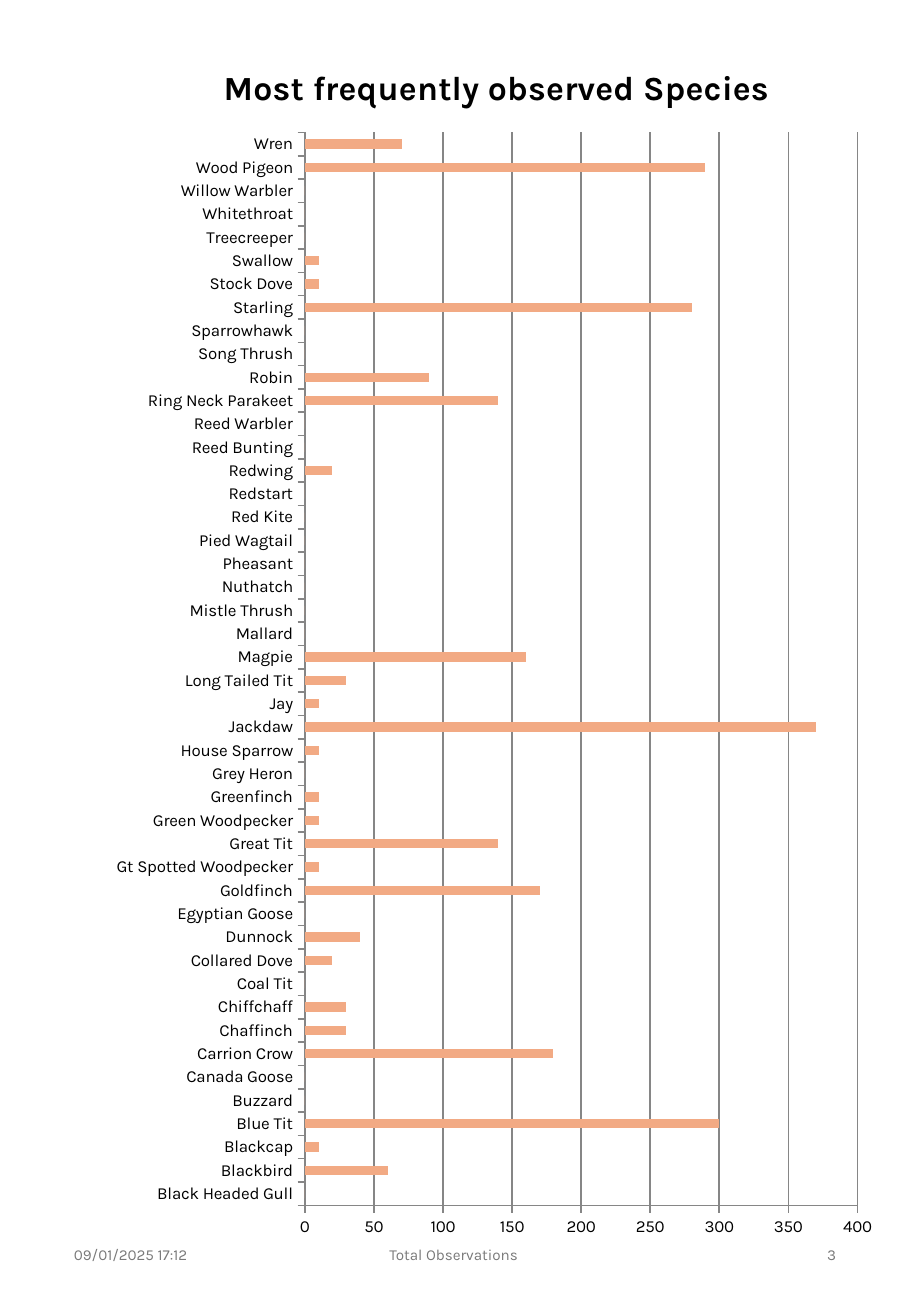
from dataclasses import dataclass

from lxml import etree
from pptx import Presentation
from pptx.chart import data as chart_data
from pptx.dml import color
from pptx.enum import chart as charts, text
from pptx.oxml import ns
from pptx.util import Emu, Pt

PX = 9144  # EMU in one px, 100 px to the inch
CHART_WIDTH, CHART_HEIGHT = 647, 1024


@dataclass(frozen=True)
class Theme:
    font: str = "Karla"
    ink: str = "000000"
    muted: str = "797979"
    line: str = "868686"
    bar: str = "F2AA84"
    title_size: int = 20
    label_size: int = 10
    footer_size: int = 9


THEME = Theme()

SIGHTINGS = {
    "Black Headed Gull": 0, "Blackbird": 60, "Blackcap": 10, "Blue Tit": 300,
    "Buzzard": 0, "Canada Goose": 0, "Carrion Crow": 180, "Chaffinch": 30,
    "Chiffchaff": 30, "Coal Tit": 0, "Collared Dove": 20, "Dunnock": 40,
    "Egyptian Goose": 0, "Goldfinch": 170, "Gt Spotted Woodpecker": 10,
    "Great Tit": 140, "Green Woodpecker": 10, "Greenfinch": 10,
    "Grey Heron": 0, "House Sparrow": 10, "Jackdaw": 370, "Jay": 10,
    "Long Tailed Tit": 30, "Magpie": 160, "Mallard": 0, "Mistle Thrush": 0,
    "Nuthatch": 0, "Pheasant": 0, "Pied Wagtail": 0, "Red Kite": 0,
    "Redstart": 0, "Redwing": 20, "Reed Bunting": 0, "Reed Warbler": 0,
    "Ring Neck Parakeet": 140, "Robin": 90, "Song Thrush": 0,
    "Sparrowhawk": 0, "Starling": 280, "Stock Dove": 10, "Swallow": 10,
    "Treecreeper": 0, "Whitethroat": 0, "Willow Warbler": 0,
    "Wood Pigeon": 290, "Wren": 70,
}

FOOTERS = [  # wording, left, width, alignment
    ("09/01/2025 17:12", 51, 169, text.PP_ALIGN.LEFT),
    ("Total Observations", 247, 253, text.PP_ALIGN.CENTER),
    ("3", 529, 169, text.PP_ALIGN.RIGHT),
]


def px(*lengths):
    return [Emu(length * PX) for length in lengths]


def apply(target, values):
    for name, value in values.items():
        setattr(target, name, value)


def style_font(font, size, ink, bold=False):
    apply(font, {"name": THEME.font, "size": Pt(size), "bold": bold})
    font.color.rgb = color.RGBColor.from_string(ink)


def style_line(line):
    line.width = Pt(1)
    line.color.rgb = color.RGBColor.from_string(THEME.line)


def set_layout(parent, index, left, top, width=None, height=None):
    """Place a chart part by hand, in px from the chart's corner."""
    for old in parent.findall(ns.qn("c:layout")):
        parent.remove(old)
    settings = {"xMode": "edge", "yMode": "edge",
                "x": left / CHART_WIDTH, "y": top / CHART_HEIGHT}
    if width and height:
        settings = {"layoutTarget": "inner", **settings,
                    "w": width / CHART_WIDTH, "h": height / CHART_HEIGHT}
    layout = etree.Element(ns.qn("c:layout"))
    manual = etree.SubElement(layout, ns.qn("c:manualLayout"))
    for name, value in settings.items():
        etree.SubElement(manual, ns.qn(f"c:{name}"), val=str(value))
    parent.insert(index, layout)


def add_footer(page, wording, left, width, alignment):
    box = page.shapes.add_textbox(*px(left, 1003, width, 58))
    apply(box.text_frame, {"word_wrap": True,
                           "vertical_anchor": text.MSO_ANCHOR.MIDDLE})
    para = box.text_frame.paragraphs[0]
    apply(para, {"alignment": alignment, "space_after": Pt(6)})
    span = para.add_run()
    span.text = wording
    style_font(span.font, THEME.footer_size, THEME.muted)


def add_title(chart, wording):
    chart.has_title = True
    title = chart.chart_title
    title.include_in_layout = False
    span = title.text_frame.paragraphs[0].add_run()
    span.text = wording
    style_font(span.font, THEME.title_size, THEME.ink, bold=True)
    set_layout(title._element, 1, 94, 26)


def add_species_chart(page):
    data = chart_data.CategoryChartData()
    data.categories = list(SIGHTINGS)
    data.add_series("Series 1", list(SIGHTINGS.values()))
    frame = page.shapes.add_chart(charts.XL_CHART_TYPE.BAR_CLUSTERED,
                                  *px(85, 22, CHART_WIDTH, CHART_HEIGHT), data)
    chart = frame.chart
    chart.has_legend = False
    style_font(chart.font, THEME.label_size, THEME.ink)
    add_title(chart, "Most frequently observed Species")

    # Bars
    plot = chart.plots[0]
    apply(plot, {"gap_width": 150, "vary_by_categories": False})
    fill = plot.series[0].format.fill
    fill.solid()
    fill.fore_color.rgb = color.RGBColor.from_string(THEME.bar)

    # Axes and gridlines
    for axis in (chart.category_axis, chart.value_axis):
        apply(axis, {"major_tick_mark": charts.XL_TICK_MARK.OUTSIDE,
                     "minor_tick_mark": charts.XL_TICK_MARK.NONE})
        style_line(axis.format.line)
    chart.category_axis.has_major_gridlines = False
    apply(chart.value_axis, {"minimum_scale": 0, "maximum_scale": 400,
                             "major_unit": 50, "has_major_gridlines": True})
    style_line(chart.value_axis.major_gridlines.format.line)

    # Plot area
    area = chart._chartSpace.find(".//" + ns.qn("c:plotArea"))
    set_layout(area, 0, 166, 87, 455, 883)


def main():
    deck = Presentation()
    deck.slide_width, deck.slide_height = px(750, 1083)
    page = deck.slides.add_slide(deck.slide_layouts[6])
    for footer in FOOTERS:
        add_footer(page, *footer)
    add_species_chart(page)
    deck.save("out.pptx")


if __name__ == "__main__":
    main()
